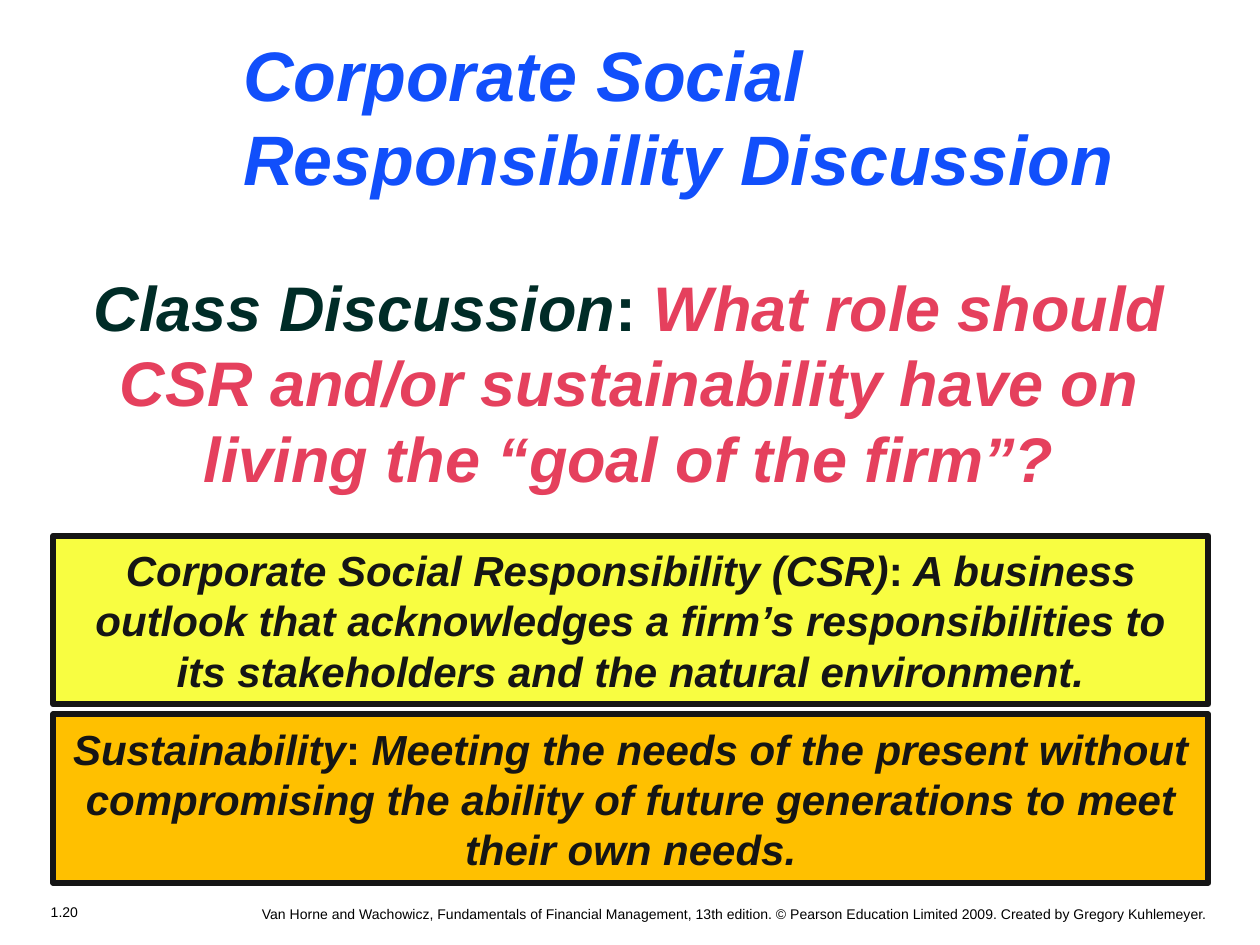
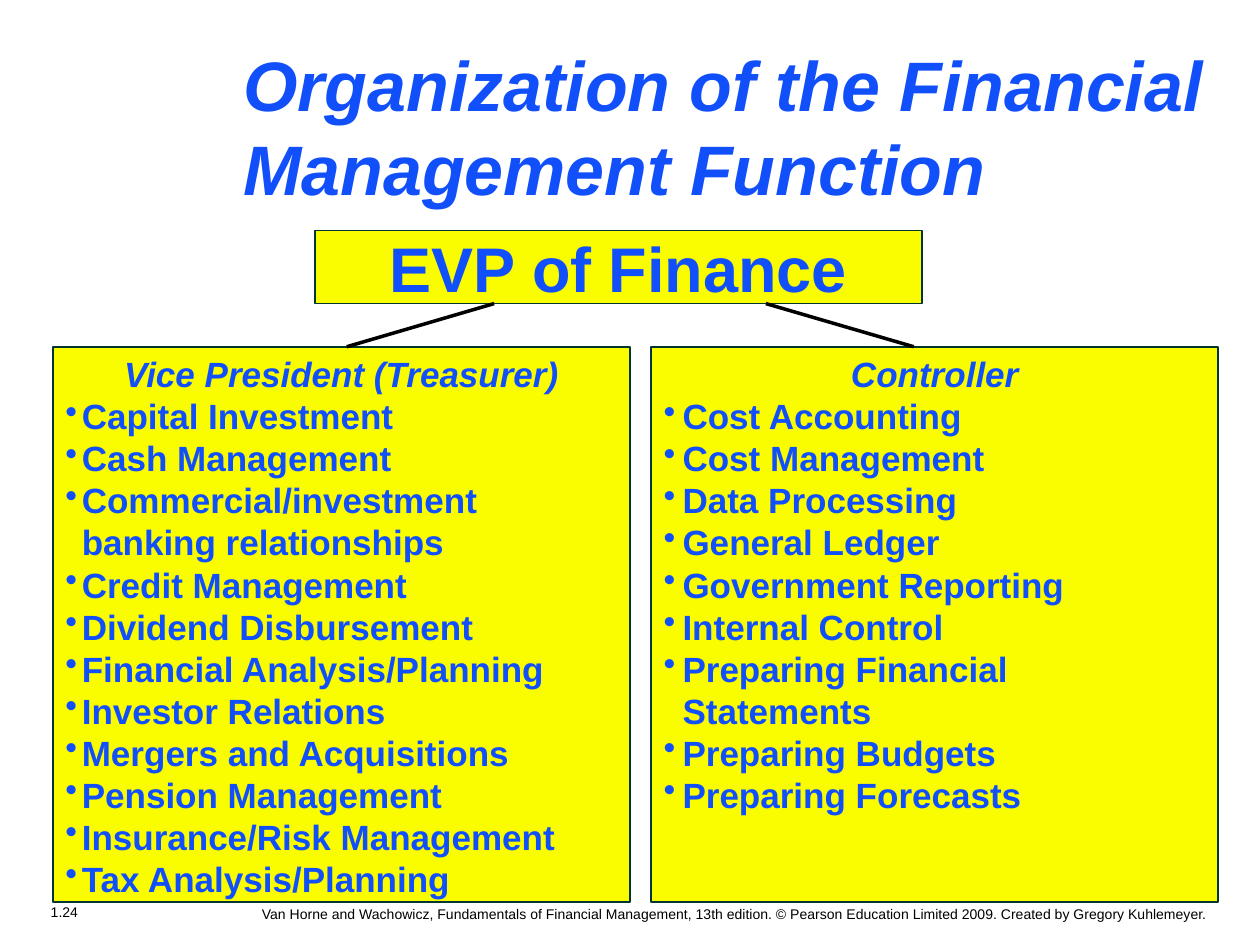
from dataclasses import dataclass

from lxml.etree import SubElement
from pptx import Presentation
from pptx.dml.color import RGBColor
from pptx.enum.shapes import MSO_CONNECTOR, MSO_SHAPE
from pptx.enum.text import MSO_ANCHOR as Anchor, MSO_AUTO_SIZE as AutoSize, PP_ALIGN as Align
from pptx.oxml.ns import qn
from pptx.util import Cm, Pt


@dataclass(frozen=True)
class Theme:
    font: str = "Arial"
    blue: str = "114FFB"
    green: str = "002C27"
    rose: str = "E5405D"
    ink: str = "151515"
    black: str = "000000"
    lemon: str = "F8FD41"
    amber: str = "FFC000"
    yellow: str = "FAFD00"
    edge: str = "003530"
    title: int = 40
    headline: int = 36
    definition: int = 24
    duties: int = 20
    footer: int = 8


THEME = Theme()

COPYRIGHT = (
    "Van Horne and Wachowicz, Fundamentals of Financial Management, 13th edition. "
    "© Pearson Education Limited 2009. Created by Gregory Kuhlemeyer."
)

DISCUSSION = {
    "number": "1.20",
    "title": "Corporate Social Responsibility Discussion",
    "title_box": (4.65, 0.51, 19.69, 3.63),
    "topic": "Class Discussion",
    "question": "What role should CSR and/or sustainability have on living the “goal of the firm”?",
    "definitions": [
        ("Corporate Social Responsibility (CSR)",
         "A business outlook that acknowledges a firm’s responsibilities to its "
         "stakeholders and the natural environment.", THEME.lemon),
        ("Sustainability",
         "Meeting the needs of the present without compromising the ability of "
         "future generations to meet their own needs.", THEME.amber),
    ],
}

ORGANIZATION = {
    "number": "1.24",
    "title": "Organization of the Financial Management Function",
    "title_box": (4.65, 0.71, 20.52, 3.63),
    "head": "EVP of Finance",
    "offices": [
        {"role": "Vice President (Treasurer)", "left": 1.07, "width": 11.63,
         "indent": 0.33, "link": (9.96, 6.99),
         "duties": ["Capital Investment", "Cash Management",
                    "Commercial/investment banking relationships",
                    "Credit Management", "Dividend Disbursement",
                    "Financial Analysis/Planning", "Investor Relations",
                    "Mergers and Acquisitions", "Pension Management",
                    "Insurance/Risk Management", "Tax Analysis/Planning"]},
        {"role": "Controller", "left": 13.13, "width": 11.43,
         "indent": 0.38, "link": (15.44, 18.42),
         "duties": ["Cost Accounting", "Cost Management", "Data Processing",
                    "General Ledger", "Government Reporting", "Internal Control",
                    "Preparing Financial Statements", "Preparing Budgets",
                    "Preparing Forecasts"]},
    ],
}


def rgb(color):
    return RGBColor.from_string(color)


def write(paragraph, text, *, size, color, bold=True, italic=False,
          align=Align.LEFT, indent=0, bullet=None):
    if indent:
        props = paragraph._p.get_or_add_pPr()
        props.set("marL", str(Cm(indent)))
        props.set("indent", str(-Cm(indent)))
        if bullet:
            SubElement(props, qn("a:buFontTx"))
            SubElement(props, qn("a:buChar")).set("char", bullet)
    paragraph.alignment = align
    run = paragraph.add_run()
    run.text = text
    font = run.font
    font.name, font.size, font.bold, font.italic = THEME.font, Pt(size), bold, italic
    font.color.rgb = rgb(color)


def write_definition(paragraph, term, meaning, *, size, term_color, meaning_color):
    style = {"size": size, "align": Align.CENTER}
    write(paragraph, term, color=term_color, italic=True, **style)
    write(paragraph, ":", color=term_color, **style)
    write(paragraph, " " + meaning, color=meaning_color, italic=True, **style)


def add_text(slide, box, wrap=True):
    frame = slide.shapes.add_textbox(*map(Cm, box)).text_frame
    frame.word_wrap = wrap
    return frame


def add_panel(slide, box, fill, edge, weight, anchor=Anchor.MIDDLE):
    panel = slide.shapes.add_shape(MSO_SHAPE.RECTANGLE, *map(Cm, box))
    panel.shadow.inherit = False
    panel.fill.solid()
    panel.fill.fore_color.rgb = rgb(fill)
    panel.line.color.rgb = rgb(edge)
    panel.line.width = Pt(weight)
    frame = panel.text_frame
    frame.word_wrap = True
    frame.vertical_anchor = anchor
    return frame


def add_link(slide, start, end):
    link = slide.shapes.add_connector(MSO_CONNECTOR.STRAIGHT, *map(Cm, start + end))
    link.line.color.rgb = rgb(THEME.black)
    link.line.width = Pt(2)
    SubElement(link._element.spPr, qn("a:effectLst"))


def start_slide(deck, content):
    slide = deck.slides.add_slide(deck.slide_layouts[5])
    small = {"size": THEME.footer, "color": THEME.black, "bold": False}
    number = add_text(slide, (0.18, 18.08, 2.24, 0.61), wrap=False)
    write(number.paragraphs[0], content["number"], align=Align.CENTER, **small)
    footer = add_text(slide, (0.61, 18.14, 24, 0.53))
    write(footer.paragraphs[0], COPYRIGHT, align=Align.RIGHT, **small)

    title = slide.shapes.title
    title.left, title.top, title.width, title.height = map(Cm, content["title_box"])
    frame = title.text_frame
    frame.auto_size = AutoSize.NONE
    frame.vertical_anchor = Anchor.MIDDLE
    write(frame.paragraphs[0], content["title"], size=THEME.title, color=THEME.blue, italic=True)
    return slide


def build_discussion(deck):
    slide = start_slide(deck, DISCUSSION)
    question = add_text(slide, (1.47, 5.28, 22.43, 11.63))
    write_definition(question.paragraphs[0], DISCUSSION["topic"], DISCUSSION["question"],
                     size=THEME.headline, term_color=THEME.green, meaning_color=THEME.rose)
    for row, (term, meaning, fill) in enumerate(DISCUSSION["definitions"]):
        definition = add_panel(slide, (1.07, 10.8 + row * 3.6, 23.29, 3.4), fill, THEME.ink, 3.25)
        write_definition(definition.paragraphs[0], term, meaning, size=THEME.definition,
                         term_color=THEME.ink, meaning_color=THEME.ink)


def build_organization(deck):
    slide = start_slide(deck, ORGANIZATION)
    head_top, head_height, office_top = 4.65, 1.47, 6.99
    head = add_panel(slide, (6.35, head_top, 12.24, head_height), THEME.yellow, THEME.edge, 1)
    head.margin_top = head.margin_bottom = 0
    write(head.paragraphs[0], ORGANIZATION["head"], size=THEME.headline,
          color=THEME.blue, align=Align.CENTER)

    for office in ORGANIZATION["offices"]:
        panel = add_panel(slide, (office["left"], office_top, office["width"], 11.2),
                          THEME.yellow, THEME.edge, 1, Anchor.TOP)
        style = {"size": THEME.duties, "color": THEME.blue, "indent": office["indent"]}
        write(panel.paragraphs[0], office["role"], italic=True, align=Align.CENTER, **style)
        for duty in office["duties"]:
            write(panel.add_paragraph(), duty, bullet="•", **style)

    for office in ORGANIZATION["offices"]:
        upper, lower = office["link"]
        add_link(slide, (upper, head_top + head_height), (lower, office_top))


def main():
    deck = Presentation()
    deck.slide_width, deck.slide_height = Cm(25.4), Cm(19.05)
    build_discussion(deck)
    build_organization(deck)
    deck.save("out.pptx")


if __name__ == "__main__":
    main()
